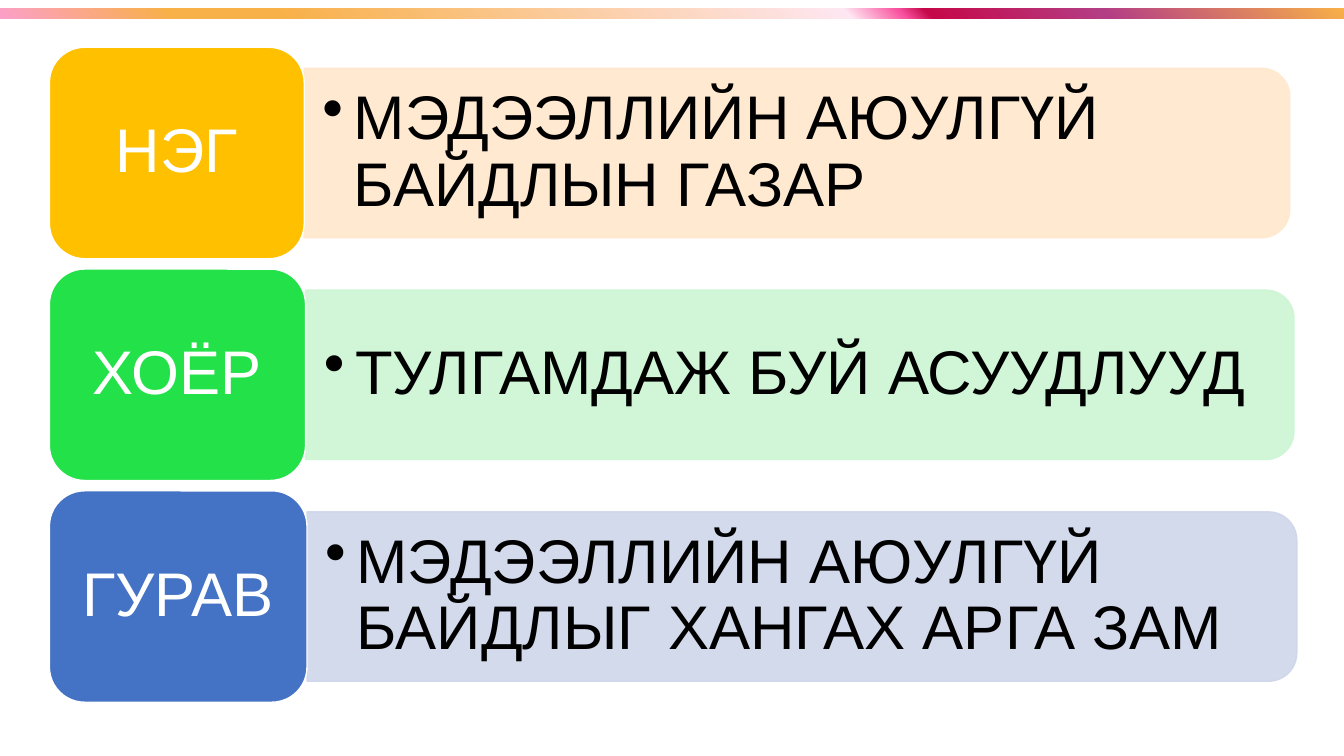
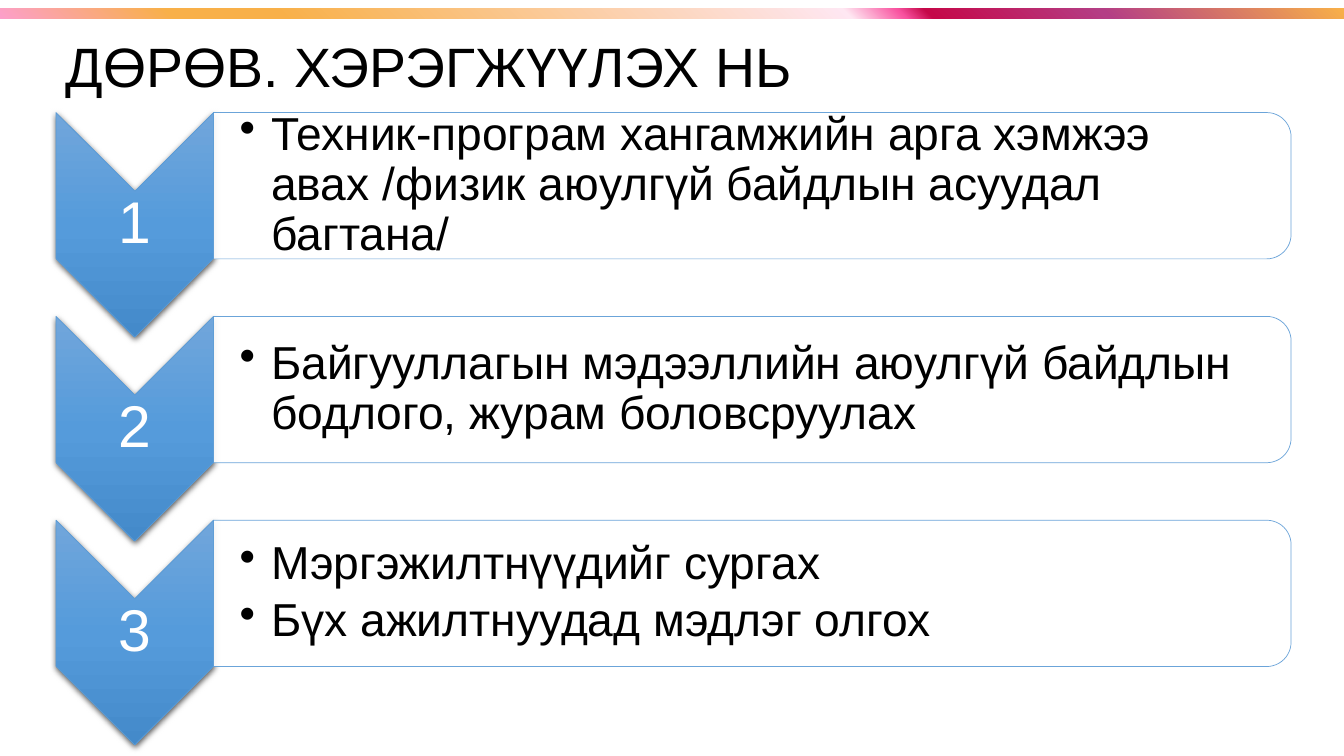
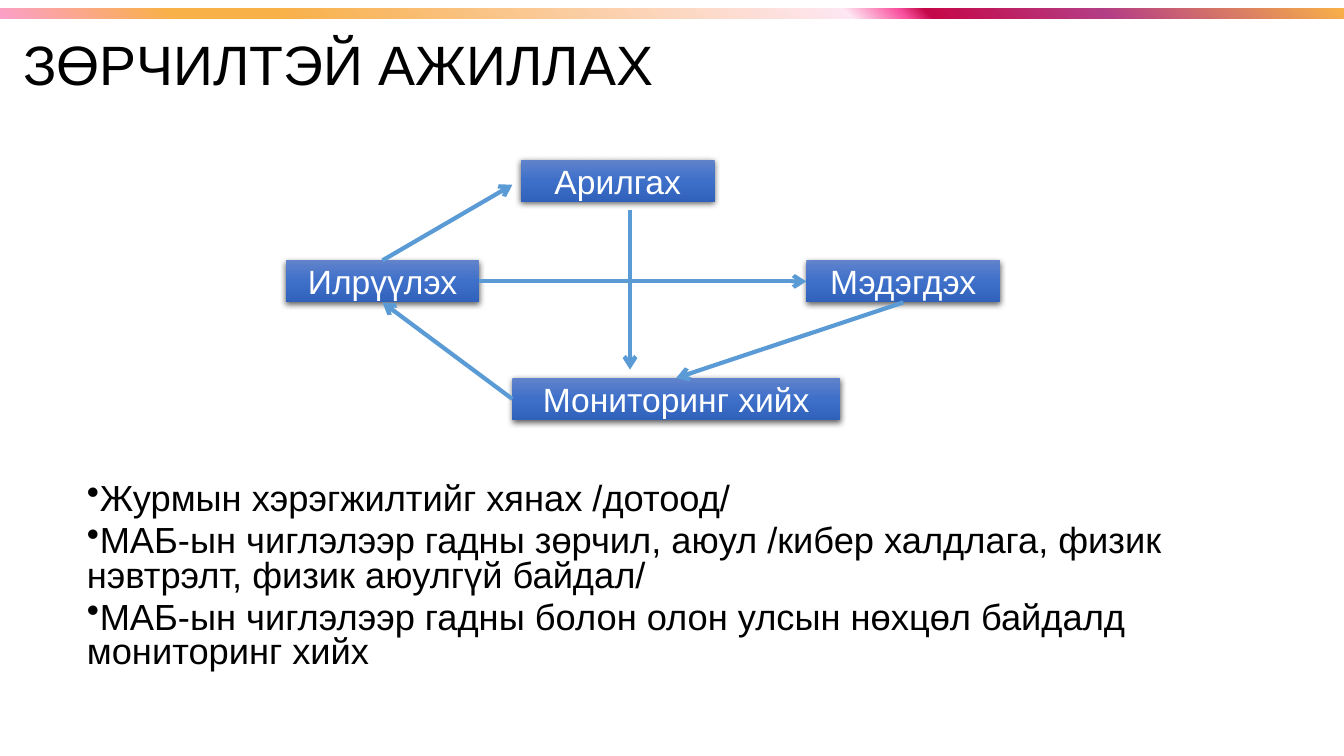
from lxml.etree import SubElement
from pptx import Presentation
from pptx.dml.color import RGBColor
from pptx.enum.shapes import MSO_CONNECTOR, MSO_SHAPE
from pptx.enum.text import MSO_ANCHOR, PP_ALIGN
from pptx.oxml.ns import qn
from pptx.util import Pt

FONT = "Arial"
BLACK = RGBColor(0x00, 0x00, 0x00)
WHITE = RGBColor(0xFF, 0xFF, 0xFF)
AMBER = RGBColor(0xFF, 0xC0, 0x00)
GREEN = RGBColor(0x23, 0xE1, 0x48)
BLUE = RGBColor(0x44, 0x72, 0xC4)
PALE_AMBER = RGBColor(0xFF, 0xE8, 0xCC)
PALE_GREEN = RGBColor(0xCC, 0xF6, 0xD3)
PALE_BLUE = RGBColor(0xCF, 0xD6, 0xEA)
SKY = RGBColor(0x5B, 0x9B, 0xD5)
PINK = RGBColor(0xFC, 0x9F, 0xCB)
ORANGE = RGBColor(0xF8, 0xB0, 0x49)
BLUSH = RGBColor(0xFE, 0xE7, 0xF2)
MAGENTA = RGBColor(0xF9, 0x52, 0xA0)
CRIMSON = RGBColor(0xC5, 0x08, 0x49)
PURPLE = RGBColor(0xB4, 0x3E, 0x85)

BAND_STOPS = [(0, PINK), (13, ORANGE), (21, ORANGE), (63, BLUSH), (67, MAGENTA),
              (69, CRIMSON), (82, PURPLE), (100, ORANGE)]
SKY_STOPS = [(0, RGBColor(0x71, 0xA6, 0xDB)), (50, RGBColor(0x55, 0x9B, 0xDB)),
             (100, RGBColor(0x44, 0x8A, 0xCA))]
BLUE_STOPS = [(0, RGBColor(0x61, 0x83, 0xCB)), (50, RGBColor(0x3E, 0x70, 0xCA)),
              (100, RGBColor(0x30, 0x62, 0xBB))]

SLIDE_WIDTH, SLIDE_HEIGHT = 960, 540
TOP, LEFT, BOTTOM, RIGHT = range(4)

CENTRED = {"align": PP_ALIGN.CENTER, "color": WHITE}
BULLET = {"bullet": True, "hanging": 22.5, "after": 5}


def set_values(target, values):
    for name, value in values.items():
        setattr(target, name, value)


def add_node(parent, tag, **attributes):
    node = SubElement(parent, qn(tag))
    for name, value in attributes.items():
        node.set(name, str(value))
    return node


def write(holder, lines, size, color=BLACK, align=PP_ALIGN.LEFT, spacing=0.9, before=0,
          after=0, bullet=False, hanging=0, insets=(7.2, 3.6, 7.2, 3.6),
          anchor=MSO_ANCHOR.MIDDLE):
    frame = holder.text_frame
    left, top, right, bottom = map(Pt, insets)
    set_values(frame, {"word_wrap": True, "vertical_anchor": anchor,
                       "margin_left": left, "margin_top": top,
                       "margin_right": right, "margin_bottom": bottom})
    for number, line in enumerate(lines):
        paragraph = frame.add_paragraph() if number else frame.paragraphs[0]
        set_values(paragraph, {"alignment": align, "line_spacing": spacing,
                               "space_before": Pt(before), "space_after": Pt(after)})
        if bullet:
            properties = paragraph._p.get_or_add_pPr()
            properties.set("marL", str(Pt(hanging)))
            properties.set("indent", str(-Pt(hanging)))
            add_node(properties, "a:buChar", char="•")
        run = paragraph.add_run()
        run.text = line
        set_values(run.font, {"name": FONT, "size": Pt(size)})
        run.font.color.rgb = color


def add_text(slide, box, lines, size, **style):
    write(slide.shapes.add_textbox(*map(Pt, box)), lines, size, **style)


def add_box(slide, preset, box, fill=None, line=None, line_width=1):
    shape = slide.shapes.add_shape(preset, *map(Pt, box))
    shape.shadow.inherit = False
    if fill is not None:
        shape.fill.solid()
        shape.fill.fore_color.rgb = fill
    if line is None:
        shape.line.fill.background()
    else:
        shape.line.color.rgb = line
        shape.line.width = Pt(line_width)
    return shape


def turned(box):
    left, top, width, height = box
    shift = (width - height) / 2
    return left + shift, top - shift, height, width


def paint_gradient(shape, stops, degrees):
    shape.fill.gradient()
    gradient = shape._element.spPr.find(qn("a:gradFill"))
    gradient.set("rotWithShape", "0")
    for child in list(gradient):
        gradient.remove(child)
    stop_list = add_node(gradient, "a:gsLst")
    for position, color in stops:
        stop = add_node(stop_list, "a:gs", pos=position * 1000)
        add_node(stop, "a:srgbClr", val=color)
    add_node(gradient, "a:lin", ang=degrees * 60000, scaled=0)


def cast_shadow(shape):
    effects = shape._element.spPr.find(qn("a:effectLst"))
    shadow = add_node(effects, "a:outerShdw", blurRad=Pt(4.5), dist=Pt(1.5),
                      dir=90 * 60000, algn="ctr", rotWithShape=0)
    color = add_node(shadow, "a:srgbClr", val=BLACK)
    add_node(color, "a:alpha", val=63000)


def add_panel(slide, box, fill, line, line_width, lines, size, margin, insets):
    panel = add_box(slide, MSO_SHAPE.ROUND_2_SAME_RECTANGLE, turned(box), fill, line, line_width)
    panel.rotation = 90
    for color in panel._element.spPr.iter(qn("a:srgbClr")):
        add_node(color, "a:alpha", val=90000)
    left, top, width, height = box
    add_text(slide, (left, top + margin, width - margin, height - 2 * margin),
             lines, size, insets=insets, **BULLET)


def add_topic(slide, top, badge_width, panel_width, name, text, color, pale):
    left, height, panel_height = 35.3, 151, 121
    panel_top = top + (height - panel_height) / 2
    insets = (13, 6.5, 13, 6.5)
    add_panel(slide, (left + badge_width, panel_top, panel_width, panel_height),
              pale, pale, 1, [text], 44, 6, insets)
    badge = add_box(slide, MSO_SHAPE.ROUNDED_RECTANGLE, (left, top, badge_width, height),
                    color, WHITE)
    write(badge, [name], 44, insets=insets, **CENTRED)


def add_step(slide, top, number, lines):
    left, width, height = 40, 112.5, 160.5
    chevron = add_box(slide, MSO_SHAPE.CHEVRON, turned((left, top, width, height)),
                      line=SKY, line_width=0.5)
    chevron.rotation = 90
    paint_gradient(chevron, SKY_STOPS, 90)
    cast_shadow(chevron)
    add_text(slide, (left, top + width / 2, width, height - width), [str(number)], 42,
             insets=(2, 2, 2, 2), **CENTRED)
    add_panel(slide, (left + width, top, 769.7, 104.5), WHITE, SKY, 0.5, lines, 33, 5,
              (18.7, 1.5, 1.5, 1.5))


def add_action(slide, left, top, name, width=138.5):
    action = add_box(slide, MSO_SHAPE.RECTANGLE, (left, top, width, 30))
    paint_gradient(action, BLUE_STOPS, 90)
    cast_shadow(action)
    write(action, [name], 24, spacing=1.0, **CENTRED)
    return action


def add_arrow(slide, start, end, source=None, target=None):
    arrow = slide.shapes.add_connector(MSO_CONNECTOR.STRAIGHT, *map(Pt, start + end))
    if source:
        arrow.begin_connect(*source)
    if target:
        arrow.end_connect(*target)
    arrow.line.color.rgb = SKY
    arrow.line.width = Pt(3)
    add_node(arrow.line._get_or_add_ln(), "a:tailEnd", type="arrow")
    add_node(arrow._element.spPr, "a:effectLst")


def add_title(slide, left, text, spacing):
    add_text(slide, (left, 24.5, SLIDE_WIDTH - 2 * left, 50), [text], 39.6, spacing=spacing)


def start_slide(deck):
    slide = deck.slides.add_slide(deck.slide_layouts[6])
    band = add_box(slide, MSO_SHAPE.RECTANGLE, (0, 6, SLIDE_WIDTH, 7.5))
    paint_gradient(band, BAND_STOPS, 315)
    return slide


def build_topics(deck):
    slide = start_slide(deck)
    topics = [
        (182, 704, "НЭГ", "МЭДЭЭЛЛИЙН АЮУЛГҮЙ БАЙДЛЫН ГАЗАР", AMBER, PALE_AMBER),
        (183, 706, "ХОЁР", "ТУЛГАМДАЖ БУЙ АСУУДЛУУД", GREEN, PALE_GREEN),
        (184, 707, "ГУРАВ", "МЭДЭЭЛЛИЙН АЮУЛГҮЙ БАЙДЛЫГ ХАНГАХ АРГА ЗАМ", BLUE, PALE_BLUE),
    ]
    for row, topic in enumerate(topics):
        add_topic(slide, 33.8 + row * 158.4, *topic)


def build_steps(deck):
    slide = start_slide(deck)
    add_title(slide, 40, "ДӨРӨВ. ХЭРЭГЖҮҮЛЭХ НЬ", 0.9)
    steps = [
        ["Техник-програм хангамжийн арга хэмжээ авах /физик аюулгүй байдлын асуудал багтана/"],
        ["Байгууллагын мэдээллийн аюулгүй байдлын бодлого, журам боловсруулах"],
        ["Мэргэжилтнүүдийг сургах", "Бүх ажилтнуудад мэдлэг олгох"],
    ]
    for row, lines in enumerate(steps):
        add_step(slide, 80.4 + row * 145.6, row + 1, lines)


def build_violations(deck):
    slide = start_slide(deck)
    add_title(slide, 9.5, "ЗӨРЧИЛТЭЙ АЖИЛЛАХ", 0.8)
    detect = add_action(slide, 204, 186, "Илрүүлэх")
    add_action(slide, 372, 114, "Арилгах")
    notify = add_action(slide, 576, 186, "Мэдэгдэх")
    monitor = add_action(slide, 366, 270, "Мониторинг хийх", 234)
    add_arrow(slide, (366, 285), (273, 216), (monitor, LEFT), (detect, BOTTOM))
    add_arrow(slide, (273, 186), (366, 132), source=(detect, TOP))
    add_arrow(slide, (450, 150), (450, 264))
    add_arrow(slide, (645, 216), (483, 270), (notify, BOTTOM), (monitor, TOP))
    add_arrow(slide, (342, 201), (576, 201), (detect, RIGHT), (notify, LEFT))
    duties = [
        "Журмын хэрэгжилтийг хянах /дотоод/",
        "МАБ-ын чиглэлээр гадны зөрчил, аюул /кибер халдлага, физик нэвтрэлт, физик аюулгүй байдал/",
        "МАБ-ын чиглэлээр гадны болон олон улсын нөхцөл байдалд мониторинг хийх",
    ]
    add_text(slide, (55, 342, 877, 150), duties, 25.9, spacing=0.8, before=5, bullet=True,
             anchor=MSO_ANCHOR.TOP)


def main():
    deck = Presentation()
    set_values(deck, {"slide_width": Pt(SLIDE_WIDTH), "slide_height": Pt(SLIDE_HEIGHT)})
    build_topics(deck)
    build_steps(deck)
    build_violations(deck)
    deck.save("out.pptx")


if __name__ == "__main__":
    main()
